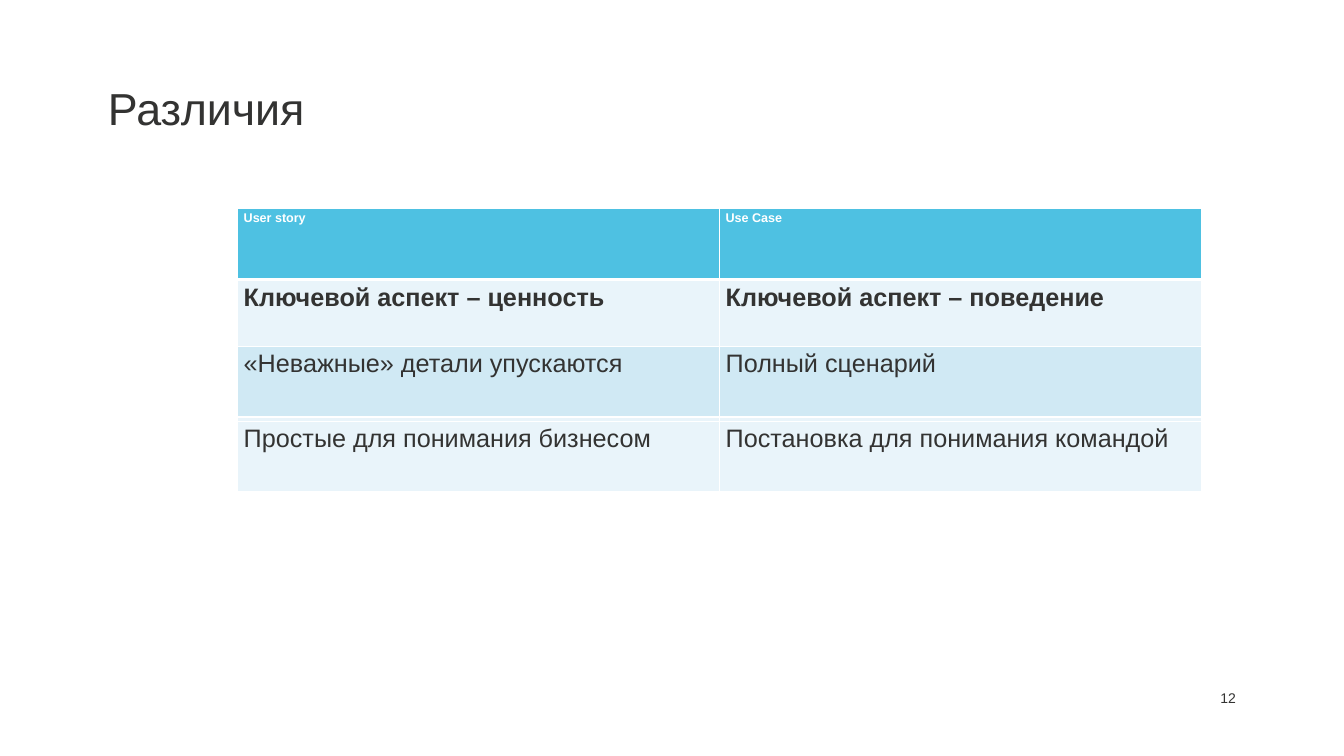
"""Builds the slide that compares user stories with use cases."""
from pptx import Presentation
from pptx.dml.color import RGBColor
from pptx.enum.text import MSO_ANCHOR, PP_ALIGN
from pptx.oxml import parse_xml
from pptx.oxml.ns import nsdecls
from pptx.util import Pt

PX = 914400 / 67.2
LEFT, WIDE, HIGH = 237, 964, 71
DARK, WHITE, HEAD, BLUE, PALE = "333332", "FFFFFF", "4EC1E2", "D0E9F4", "E9F4FA"
EDGES = {"lnL": 1, "lnR": 1, "lnT": 1, "lnB": 3}


def color(code):
    return RGBColor.from_string(code)


def write(frame, text, size, code=DARK, bold=False):
    para = frame.paragraphs[0]
    run = para.add_run()
    run.text = text
    look = {"name": "Arial", "size": Pt(size), "bold": bold}
    for key, value in look.items():
        setattr(run.font, key, value)
    run.font.color.rgb = color(code)
    return para


deck = Presentation()
deck.slide_width, deck.slide_height = round(1344 * PX), round(756 * PX)
slide = deck.slides.add_slide(deck.slide_layouts[6])

labels = [
    ("Различия", 48, (108, 84, 871, 62), MSO_ANCHOR.TOP, PP_ALIGN.LEFT, 0.96),
    ("12", 15, (1139, 664, 97, 42), MSO_ANCHOR.BOTTOM, PP_ALIGN.RIGHT, 1.0),
]
for text, size, box, anchor, align, space in labels:
    frame = slide.shapes.add_textbox(*[round(n * PX) for n in box]).text_frame
    form = {"word_wrap": True, "vertical_anchor": anchor, "margin_left": 0,
            "margin_right": 0, "margin_top": 0, "margin_bottom": 0}
    for key, value in form.items():
        setattr(frame, key, value)
    para = write(frame, text, size)
    para.alignment, para.line_spacing = align, space

tables = [
    (208, ("User story", "Use Case"), 13.5, WHITE, True, (HEAD, BLUE, PALE, BLUE)),
    (280, ("Ключевой аспект – ценность", "Ключевой аспект – поведение"),
     27, DARK, True, (PALE,)),
    (346, ("«Неважные» детали упускаются", "Полный сценарий"),
     27, DARK, False, (BLUE,)),
    (421, ("Простые для понимания бизнесом", "Постановка для понимания командой"),
     27, DARK, False, (PALE,)),
]
for top, words, size, code, bold, fills in tables:
    area = (LEFT, top, WIDE, HIGH * len(fills))
    table = slide.shapes.add_table(
        len(fills), len(words), *[round(n * PX) for n in area]).table
    for row, fill in zip(table.rows, fills):
        row.height = round(HIGH * PX)
        for cell in row.cells:
            props = cell._tc.get_or_add_tcPr()
            for edge, width in EDGES.items():
                thin = 1 if len(fills) > 1 and fill != HEAD else width
                props.append(parse_xml(
                    f'<a:{edge} {nsdecls("a")} w="{Pt(thin)}"><a:solidFill>'
                    f'<a:srgbClr val="{WHITE}"/></a:solidFill></a:{edge}>'))
            cell.fill.solid()
            cell.fill.fore_color.rgb = color(fill)
    for cell, text in zip(table.rows[0].cells, words):
        write(cell.text_frame, text, size, code, bold)

deck.save("out.pptx")
